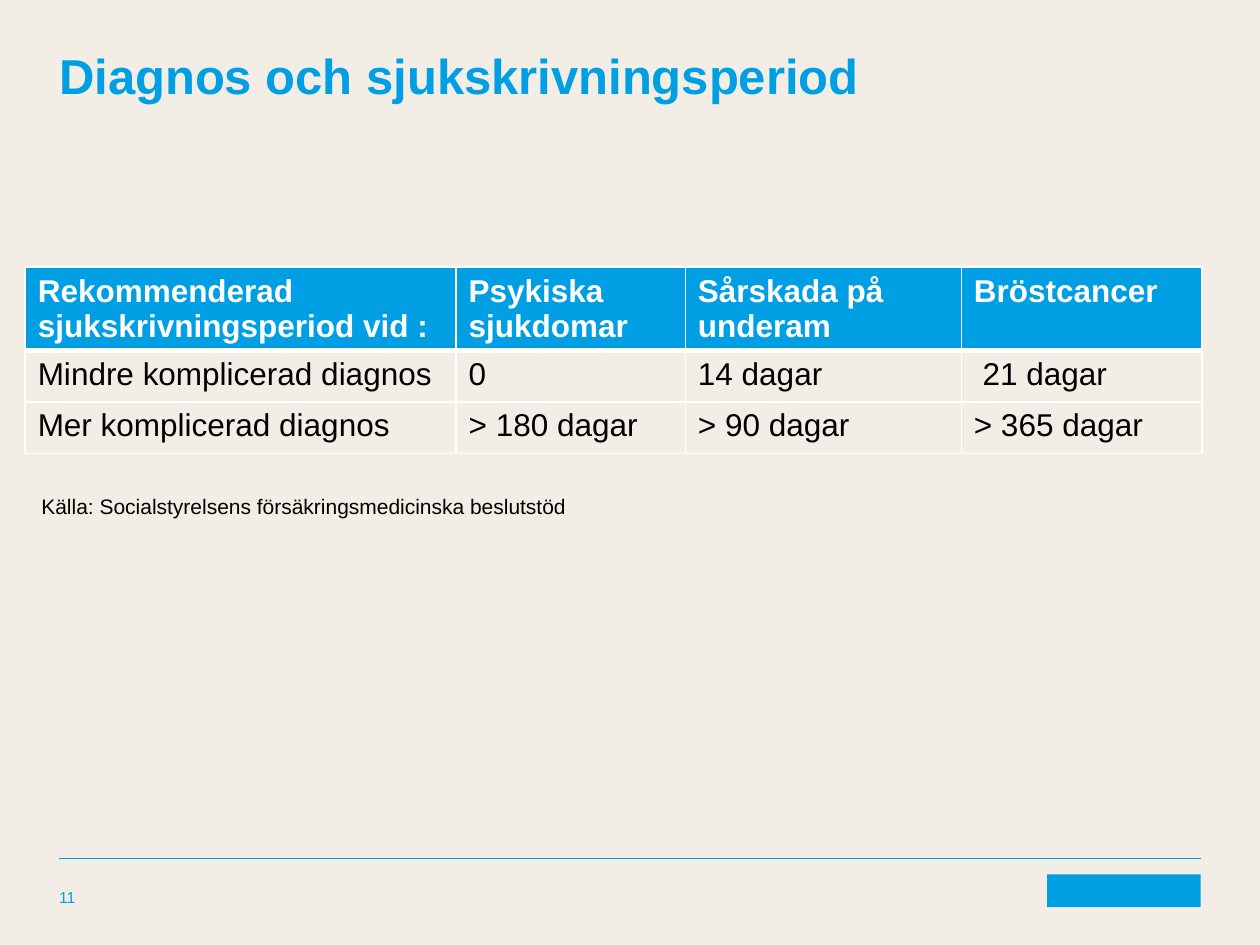
from lxml.etree import SubElement
from pptx import Presentation
from pptx.dml.color import RGBColor
from pptx.enum.shapes import MSO_CONNECTOR, MSO_SHAPE
from pptx.enum.text import MSO_ANCHOR, PP_ALIGN
from pptx.oxml import parse_xml
from pptx.oxml.ns import nsdecls, qn
from pptx.util import Inches, Pt

BLUE = RGBColor(0x00, 0x9F, 0xE4)
BEIGE = RGBColor(0xF2, 0xEE, 0xE6)
WHITE = RGBColor(0xFF, 0xFF, 0xFF)
BLACK = RGBColor(0x00, 0x00, 0x00)
FONT = "Arial"

MARGIN, CONTENT_WIDTH = 0.47, 9.06
COLUMN_WIDTHS = [3.42, 1.82, 2.19, 1.91]
ROW_HEIGHTS = [0.66, 0.41, 0.41]
RECOMMENDATIONS = [
    ["Rekommenderad sjukskrivningsperiod vid :", "Psykiska sjukdomar",
     "Sårskada på underam", "Bröstcancer"],
    ["Mindre komplicerad diagnos", "0", "14 dagar", " 21 dagar"],
    ["Mer komplicerad diagnos", "> 180 dagar", "> 90 dagar", "> 365 dagar"],
]


class SlideBuilder:
    def __init__(self, prs):
        self.s = prs.slides.add_slide(prs.slide_layouts[5])
        self.s.background.fill.solid()
        self.s.background.fill.fore_color.rgb = BEIGE

    def set_text(self, tf, text, size, color, bold=False):
        tf.text = text
        tf.word_wrap = True
        p = tf.paragraphs[0]
        p.alignment = PP_ALIGN.LEFT
        for r in p.runs:
            r.font.name, r.font.size, r.font.bold = FONT, Pt(size), bold
            r.font.color.rgb = color

    def clear_margins(self, tf):
        tf.margin_left = tf.margin_right = tf.margin_top = tf.margin_bottom = 0

    def title(self, text, left, top, width, height):
        sp = self.s.shapes.title
        sp.left, sp.top = Inches(left), Inches(top)
        sp.width, sp.height = Inches(width), Inches(height)
        tf = sp.text_frame
        self.set_text(tf, text, 28, BLUE, bold=True)
        self.clear_margins(tf)
        tf.vertical_anchor = MSO_ANCHOR.TOP

    def text(self, text, left, top, width, height, size, color):
        sp = self.s.shapes.add_textbox(
            Inches(left), Inches(top), Inches(width), Inches(height))
        self.set_text(sp.text_frame, text, size, color)
        return sp.text_frame

    def rule(self, left, top, width):
        line = self.s.shapes.add_connector(
            MSO_CONNECTOR.STRAIGHT, Inches(left), Inches(top),
            Inches(left + width), Inches(top))
        line.line.color.rgb, line.line.width = BLUE, Pt(0.5)
        SubElement(line._element.spPr, qn("a:effectLst"))

    def block(self, left, top, width, height):
        sp = self.s.shapes.add_shape(
            MSO_SHAPE.RECTANGLE, Inches(left), Inches(top), Inches(width), Inches(height))
        sp.shadow.inherit = False
        sp.fill.solid()
        sp.fill.fore_color.rgb = BLUE
        sp.line.fill.background()

    def borders(self, cell, bottom, top):
        tc_pr = cell._tc.get_or_add_tcPr()
        widths = {"lnL": 1, "lnR": 1, "lnT": top, "lnB": bottom}
        for i, (side, width) in enumerate(widths.items()):
            tc_pr.insert(i, parse_xml(
                f'<a:{side} {nsdecls("a")} w="{Pt(width)}"><a:solidFill>'
                f'<a:srgbClr val="{WHITE}"/></a:solidFill></a:{side}>'))

    def table(self, rows, left, top, widths, heights):
        table = self.s.shapes.add_table(
            len(rows), len(widths), Inches(left), Inches(top),
            Inches(sum(widths)), Inches(sum(heights))).table
        for column, width in zip(table.columns, widths):
            column.width = Inches(width)
        for i, (values, height) in enumerate(zip(rows, heights)):
            table.rows[i].height = Inches(height)
            header = i == 0
            for j, value in enumerate(values):
                cell = table.cell(i, j)
                self.set_text(cell.text_frame, value, 18, WHITE if header else BLACK, header)
                if header:
                    cell.fill.solid()
                    cell.fill.fore_color.rgb = BLUE
                else:
                    cell.fill.background()
                self.borders(cell, bottom=3 if header else 1, top=3 if i == 1 else 1)


def main():
    prs = Presentation()
    prs.slide_width, prs.slide_height = Inches(10), Inches(7.5)
    slide = SlideBuilder(prs)

    # Footer rule and plain block in the corner
    slide.rule(MARGIN, 6.81, CONTENT_WIDTH)
    slide.block(8.31, 6.94, 1.22, 0.26)

    # Title, table and source
    slide.title("Diagnos och sjukskrivningsperiod", MARGIN, 0.36, CONTENT_WIDTH, 1.65)
    slide.table(RECOMMENDATIONS, 0.2, 2.12, COLUMN_WIDTHS, ROW_HEIGHTS)
    slide.text("Källa: Socialstyrelsens försäkringsmedicinska beslutstöd",
               0.23, 3.87, 8.11, 0.3, 12, BLACK)

    # Page number
    tf = slide.text("11", MARGIN, 6.94, 2.36, 0.26, 9, BLUE)
    slide.clear_margins(tf)
    tf.vertical_anchor = MSO_ANCHOR.BOTTOM

    prs.save("out.pptx")


if __name__ == "__main__":
    main()
